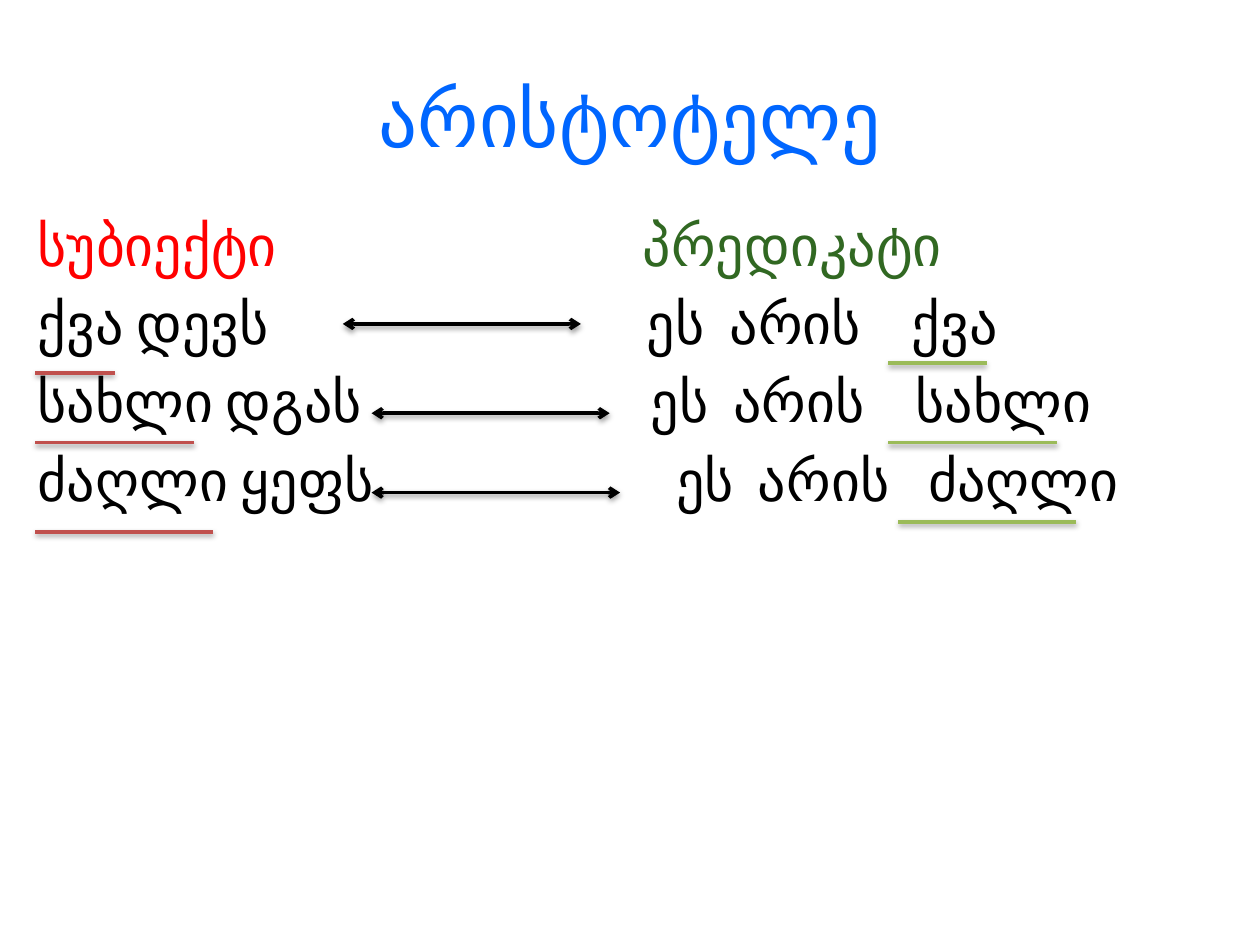
import pptx
import pptx.dml.color
import pptx.enum.shapes
import pptx.enum.text
import pptx.util
from lxml import etree
from pptx.oxml.ns import qn

Cm, Pt = pptx.util.Cm, pptx.util.Pt

# Content
TITLE = "არისტოტელე"
BLUE, BLACK = "0066FF", "000000"
SUBJECT_TEXT, PREDICATE_TEXT = "FF0000", "316822"
SUBJECT_LINE, PREDICATE_LINE = "C0504D", "9BBB59"

# Each row: (text, colour) columns, then the tab stops of columns two onwards
ROWS = [
    ([("სუბიექტი", SUBJECT_TEXT), ("პრედიკატი", PREDICATE_TEXT)], [12.2]),
    ([("ქვა დევს", BLACK), ("ეს", BLACK), ("არის", BLACK), ("ქვა", BLACK)],
     [12.28, 13.95, 17.62]),
    ([("სახლი დგას", BLACK), ("ეს", BLACK), ("არის", BLACK), ("სახლი", BLACK)],
     [12.36, 14.02, 17.7]),
    ([("ძაღლი ყეფს", BLACK), ("ეს", BLACK), ("არის", BLACK), ("ძაღლი", BLACK)],
     [12.87, 14.52, 17.95]),
]

# Horizontal lines in cm: left, right, height on the slide
SUBJECT_UNDERLINES = [(0.71, 2.31, 7.52), (0.71, 3.91, 8.92), (0.71, 4.29, 10.72)]
PREDICATE_UNDERLINES = [(17.91, 19.89, 7.32), (17.91, 21.31, 8.92), (18.11, 21.69, 10.52)]
ARROWS = [(6.91, 11.71, 6.53), (7.49, 12.29, 8.33), (7.49, 12.5, 9.93)]


def colour(value):
    return pptx.dml.color.RGBColor.from_string(value)


def add_text(paragraph, text, *, size, fill, font="Calibri"):
    run = paragraph.add_run()
    run.text = text
    run.font.size = Pt(size)
    run.font.name = font
    run.font.color.rgb = colour(fill)


def add_tab_stops(paragraph, stops):
    tab_list = etree.SubElement(paragraph._p.get_or_add_pPr(), qn("a:tabLst"))
    for stop in stops:
        etree.SubElement(tab_list, qn("a:tab"), pos=str(Cm(stop)), algn="l")


def add_line(slide, left, right, height, fill, arrows=False):
    connector = slide.shapes.add_connector(
        pptx.enum.shapes.MSO_CONNECTOR.STRAIGHT,
        Cm(left), Cm(height), Cm(right), Cm(height))
    connector.line.color.rgb = colour(fill)
    connector.line.width = Pt(2)
    if arrows:
        for end in ("a:headEnd", "a:tailEnd"):
            etree.SubElement(connector.line._get_or_add_ln(), qn(end), type="arrow")
    # Soft shadow straight below the line
    effects = etree.SubElement(connector._element.spPr, qn("a:effectLst"))
    shadow = etree.SubElement(
        effects, qn("a:outerShdw"), blurRad=str(Pt(3.1)), dist=str(Pt(1.6)),
        dir="5400000", rotWithShape="0")
    shade = etree.SubElement(shadow, qn("a:srgbClr"), val=BLACK)
    etree.SubElement(shade, qn("a:alpha"), val="38000")


def main():
    presentation = pptx.Presentation()
    presentation.slide_width, presentation.slide_height = Cm(25.4), Cm(19.05)
    slide = presentation.slides.add_slide(presentation.slide_layouts[5])

    # Title
    title = slide.shapes.title
    title.left, title.top, title.width, title.height = Cm(1.27), Cm(0.76), Cm(22.86), Cm(3.18)
    title.text_frame.vertical_anchor = pptx.enum.text.MSO_ANCHOR.MIDDLE
    paragraph = title.text_frame.paragraphs[0]
    paragraph.alignment = pptx.enum.text.PP_ALIGN.CENTER
    add_text(paragraph, TITLE, size=44, fill=BLUE)

    # Subjects and predicates
    body = slide.shapes.add_textbox(Cm(0.51), Cm(4.11), Cm(24.41), Cm(14))
    frame = body.text_frame
    frame.word_wrap = True
    for index, (columns, stops) in enumerate(ROWS):
        paragraph = frame.add_paragraph() if index else frame.paragraphs[0]
        paragraph.space_before = Pt(6.4)
        add_tab_stops(paragraph, stops)
        for column, (text, fill) in enumerate(columns):
            add_text(paragraph, "\t" + text if column else text, size=32, fill=fill)

    # Underlines and arrows
    for lines, fill, arrows in (
        (SUBJECT_UNDERLINES, SUBJECT_LINE, False),
        (PREDICATE_UNDERLINES, PREDICATE_LINE, False),
        (ARROWS, BLACK, True),
    ):
        for left, right, height in lines:
            add_line(slide, left, right, height, fill, arrows)

    presentation.save("out.pptx")


if __name__ == "__main__":
    main()
